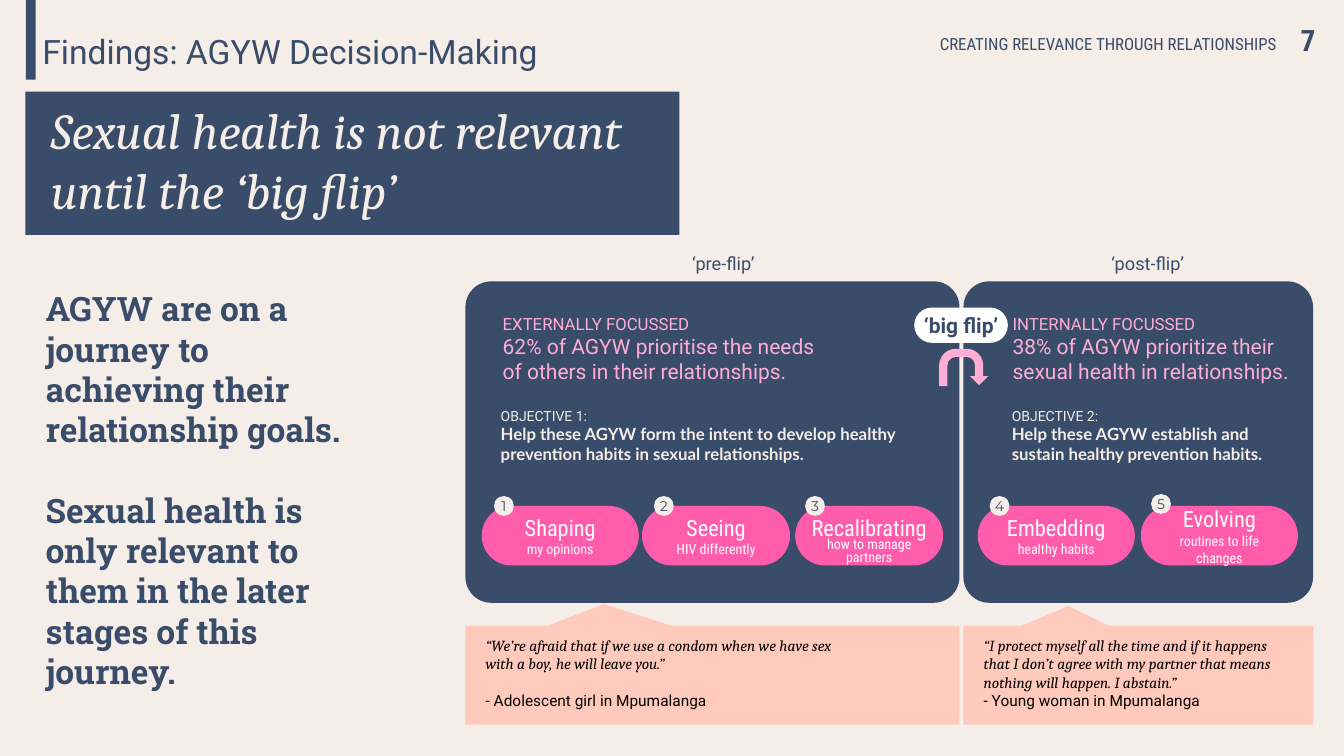
"""Build the findings slide on AGYW decision-making and the 'big flip'."""
from dataclasses import dataclass

from pptx import Presentation
from pptx.dml.color import RGBColor
from pptx.enum.shapes import MSO_SHAPE
from pptx.enum.text import MSO_ANCHOR, PP_ALIGN
from pptx.util import Cm, Pt

RECT, ROUND, OVAL = MSO_SHAPE.RECTANGLE, MSO_SHAPE.ROUNDED_RECTANGLE, MSO_SHAPE.OVAL
CALLOUT, UTURN = MSO_SHAPE.RECTANGULAR_CALLOUT, MSO_SHAPE.U_TURN_ARROW
TOP, MIDDLE = MSO_ANCHOR.TOP, MSO_ANCHOR.MIDDLE
LEFT, CENTER, RIGHT = PP_ALIGN.LEFT, PP_ALIGN.CENTER, PP_ALIGN.RIGHT

COLORS = {
    "navy": "394C69", "cream": "F5EDE7", "pink": "FF5CAB", "rose": "FFADD5",
    "peach": "FFC9BC", "white": "FFFFFF", "black": "000000",
}
SANS, CONDENSED, SLAB, SERIF = "Roboto", "Roboto Condensed", "Roboto Slab", "Cambria"
NO_INSET = (0, 0, 0, 0)
EVEN_INSET = (0.25, 0.25, 0.25, 0.25)
PANEL_TOP, PANEL_HEIGHT = 7.09, 8.1
PILL_TOP, PILL_HEIGHT = 12.75, 1.5
QUOTE_TOP, QUOTE_HEIGHT = 15.77, 2.49


@dataclass
class Line:
    text: str
    size: float
    font: str = SANS
    color: str = "navy"
    bold: bool = False
    italic: bool = False
    before: float = 0
    spacing: float = 1.0


@dataclass
class Frame:
    left: float
    top: float
    width: float
    height: float


@dataclass
class Panel:
    left: float
    width: float
    label: str
    label_left: float
    focus: tuple
    focus_left: float
    focus_width: float
    objective: tuple
    objective_left: float
    objective_width: float
    quote: tuple
    speaker: str
    speaker_gap: float
    pointer: tuple


@dataclass
class Stage:
    left: float
    width: float
    name: str
    caption: str
    badge_left: float
    badge_top: float = 12.5
    split: bool = False


PANELS = [
    Panel(24.28, 8.81, "‘post-flip’", 25.63,
          ("INTERNALLY FOCUSSED",
           "38% of AGYW prioritize their sexual health in relationships."), 25.27, 7.8,
          ("OBJECTIVE 2:",
           "Help these AGYW establish and sustain healthy prevention habits."), 25.25, 7.32,
          ("“I protect myself all the time and if it happens that I don’t agree with my "
           "partner that means nothing will happen. I abstain.”",),
          "- Young woman in Mpumalanga", 0, (-0.2, -0.7)),
    Panel(11.73, 12.45, "‘pre-flip’", 14.94,
          ("EXTERNALLY FOCUSSED",
           "62% of AGYW prioritise the needs of others in their relationships."), 12.42, 8.81,
          ("OBJECTIVE 1:",
           "Help these AGYW form the intent to develop healthy prevention habits "
           "in sexual relationships."), 12.37, 10.57,
          ("“We’re afraid that if we use a condom when we have sex",
           "with a boy, he will leave you.”"),
          "- Adolescent girl in Mpumalanga", 13.2, (-0.22, -0.72)),
]
STAGES = [
    Stage(12.14, 3.96, "Shaping", "my opinions", 12.45),
    Stage(16.18, 3.73, "Seeing", "HIV differently", 16.48),
    Stage(20.04, 3.73, "Recalibrating", "how to manage partners", 20.29, split=True),
    Stage(24.64, 3.96, "Embedding", "healthy habits", 24.94),
    Stage(28.75, 3.96, "Evolving", "routines to life changes", 29.01, 12.45),
]


def rgb(name: str) -> RGBColor:
    return RGBColor.from_string(COLORS[name])


def write(shape, lines: list[Line], align=LEFT, anchor=TOP, inset=NO_INSET) -> None:
    frame = shape.text_frame
    sides = ("margin_left", "margin_top", "margin_right", "margin_bottom")
    layout = {"word_wrap": True, "vertical_anchor": anchor}
    layout.update(zip(sides, map(Cm, inset)))
    for name, value in layout.items():
        setattr(frame, name, value)
    for index, line in enumerate(lines):
        para = frame.add_paragraph() if index else frame.paragraphs[0]
        para.alignment = align
        if line.before:
            para.space_before = Pt(line.before)
        if line.spacing != 1:
            para.line_spacing = line.spacing
        span = para.add_run()
        span.text = line.text
        span.font.color.rgb = rgb(line.color)
        formats = {"name": line.font, "size": Pt(line.size),
                   "bold": line.bold, "italic": line.italic}
        for name, value in formats.items():
            setattr(span.font, name, value)


def add_box(page, at: Frame, lines: list[Line], align=LEFT, anchor=TOP, inset=NO_INSET) -> None:
    box = page.shapes.add_textbox(Cm(at.left), Cm(at.top), Cm(at.width), Cm(at.height))
    write(box, lines, align, anchor, inset)


def add_figure(page, kind, at: Frame, fill: str, adjust: tuple = ()):
    figure = page.shapes.add_shape(kind, Cm(at.left), Cm(at.top), Cm(at.width), Cm(at.height))
    figure.shadow.inherit = False
    figure.fill.solid()
    figure.fill.fore_color.rgb = rgb(fill)
    figure.line.fill.background()
    for index, value in enumerate(adjust):
        figure.adjustments[index] = value
    return figure


def add_header(page) -> None:
    add_figure(page, RECT, Frame(0.65, 0, 0.25, 2.01), "navy")
    add_box(page, Frame(1.07, 0.79, 16.08, 1.55), [Line("Findings: AGYW Decision-Making", 24)])
    title = add_figure(page, RECT, Frame(0.64, 2.31, 16.48, 3.61), "navy")
    write(title, [Line("Sexual health is not relevant until the ‘big flip’", 36, SERIF,
                       "cream", italic=True)], inset=(0.64, 0.18, 0, 0))
    add_box(page, Frame(17.37, 0.57, 14.81, 1.09),
            [Line("CREATING RELEVANCE THROUGH RELATIONSHIPS", 12, CONDENSED)], RIGHT, MIDDLE)
    add_box(page, Frame(32.15, 0.46, 1, 1.09), [Line("7", 21, CONDENSED, bold=True)],
            RIGHT, MIDDLE)
    add_box(page, Frame(0.64, 7.01, 8.13, 11.4), [
        Line("AGYW are on a journey to achieving their relationship goals.", 24, SLAB, bold=True),
        Line("Sexual health is only relevant to them in the later stages of this journey.",
             24, SLAB, bold=True, before=28.8),
    ], inset=(0.51, 0.25, 0, 0))


def add_panel(page, panel: Panel) -> None:
    add_figure(page, ROUND, Frame(panel.left, PANEL_TOP, panel.width, PANEL_HEIGHT),
               "navy", (0.08,))
    add_box(page, Frame(panel.label_left, 6.1, 6.58, 1.07), [Line(panel.label, 13)],
            CENTER, inset=EVEN_INSET)
    heading, finding = panel.focus
    add_box(page, Frame(panel.focus_left, 7.65, panel.focus_width, 2.31),
            [Line(heading, 12, color="rose"), Line(finding, 15, color="rose")],
            inset=EVEN_INSET)
    heading, aim = panel.objective
    add_box(page, Frame(panel.objective_left, 10.01, panel.objective_width, 1.96),
            [Line(heading, 10, color="cream"), Line(aim, 12, "Lato", "cream", bold=True)],
            inset=EVEN_INSET)
    quote = add_figure(page, CALLOUT, Frame(panel.left, QUOTE_TOP, panel.width, QUOTE_HEIGHT),
                       "peach", panel.pointer)
    lines = [Line(text, 11, SERIF, "black", italic=True) for text in panel.quote]
    lines.append(Line(panel.speaker, 11, color="black", before=panel.speaker_gap))
    write(quote, lines, inset=(0.51, 0.25, 0.51, 0))


def add_stage(page, number: int, stage: Stage) -> None:
    pill = add_figure(page, ROUND, Frame(stage.left, PILL_TOP, stage.width, PILL_HEIGHT),
                      "pink", (0.5,))
    name = Line(stage.name, 16, CONDENSED, "white")
    caption = Line(stage.caption, 10, CONDENSED, "white")
    if stage.split:
        caption.spacing = 0.8
        write(pill, [name], CENTER, MIDDLE, (0, 0, 0, 0.4))
        width = 3.05
        left = stage.left + (stage.width - width) / 2
        add_box(page, Frame(left, 13.16, width, PILL_HEIGHT), [caption], CENTER, MIDDLE)
    else:
        write(pill, [name, caption], CENTER, MIDDLE, EVEN_INSET)
    badge = add_figure(page, OVAL, Frame(stage.badge_left, stage.badge_top, 0.5, 0.5), "cream")
    write(badge, [Line(str(number), 10, "Montserrat")], CENTER, MIDDLE)
    badge.text_frame.word_wrap = False


def main() -> None:
    deck = Presentation()
    deck.slide_width, deck.slide_height = Cm(33.87), Cm(19.05)
    page = deck.slides.add_slide(deck.slide_layouts[6])
    page.background.fill.solid()
    page.background.fill.fore_color.rgb = rgb("cream")
    add_header(page)
    for panel in PANELS:
        add_panel(page, panel)
    for number, stage in enumerate(STAGES, start=1):
        add_stage(page, number, stage)
    flip = add_figure(page, ROUND, Frame(23.04, 7.75, 2.36, 0.89), "white", (0.5,))
    write(flip, [Line("‘big flip’", 15, bold=True)], CENTER, MIDDLE)
    add_figure(page, UTURN, Frame(23.67, 8.79, 1.24, 0.94), "rose",
               (0.22, 0.25, 0.25, 0.44, 0.98))
    deck.save("out.pptx")


if __name__ == "__main__":
    main()
